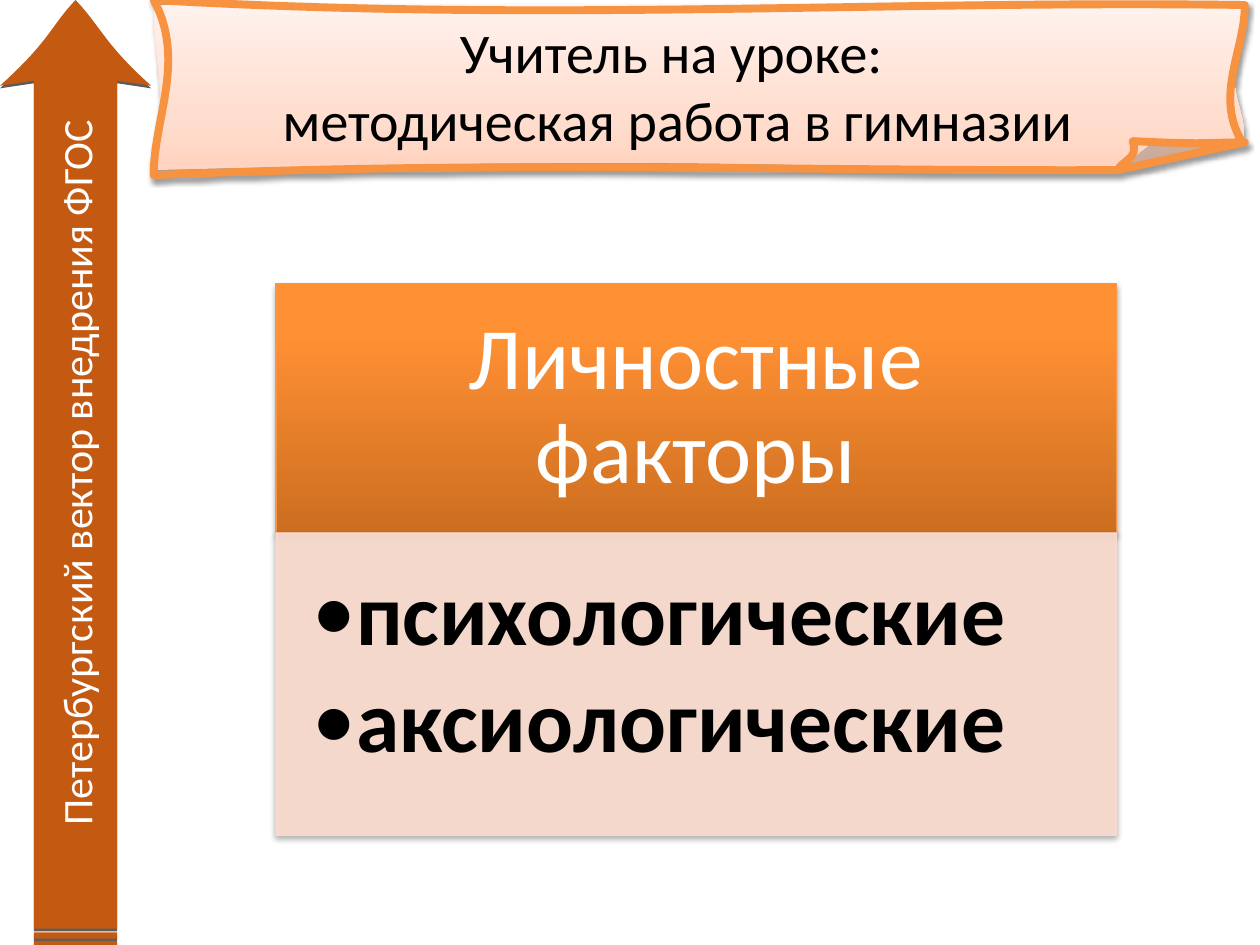
from lxml.etree import SubElement
from pptx import Presentation
from pptx.dml.color import RGBColor
from pptx.enum.shapes import MSO_SHAPE
from pptx.enum.text import MSO_ANCHOR, PP_ALIGN
from pptx.oxml.ns import qn
from pptx.util import Inches, Pt

COLORS = {
    "arrow": "C45911", "banner_line": "F69240", "header_line": "F79646",
    "panel": "FCDDCF", "black": "000000", "white": "FFFFFF",
}
BANNER_GRADIENT = [(0, "FFD2BD"), (35, "FFDED0"), (100, "FFF2ED")]
HEADER_GRADIENT = [(0, "CC6E20"), (80, "FF9034"), (100, "FF9136")]
FONT = "Calibri"


def rgb(name):
    return RGBColor.from_string(COLORS[name])


def set_alpha(paint, percent):
    for color in paint.iter(qn("a:srgbClr")):
        SubElement(color, qn("a:alpha"), val=str(percent * 1000))


def set_gradient(shape, stops):
    """Fill from the bottom up with any number of stops."""
    shape.fill.gradient()
    gradient = shape._element.spPr.find(qn("a:gradFill"))
    for child in list(gradient):
        gradient.remove(child)
    stop_list = SubElement(gradient, qn("a:gsLst"))
    for position, color in stops:
        stop = SubElement(stop_list, qn("a:gs"), pos=str(position * 1000))
        SubElement(stop, qn("a:srgbClr"), val=color)
    SubElement(gradient, qn("a:lin"), ang="16200000", scaled="0")


def style(shape, fill, shadow, line=None, width=0.75):
    """fill: colour name or gradient stops; shadow: (alpha, blur, distance)."""
    if isinstance(fill, str):
        shape.fill.solid()
        shape.fill.fore_color.rgb = rgb(fill)
    else:
        set_gradient(shape, fill)
    if line:
        shape.line.color.rgb = rgb(line)
        shape.line.width = Pt(width)
    else:
        shape.line.fill.background()
    shape.shadow.inherit = False
    alpha, blur, distance = shadow
    effects = shape._element.spPr.find(qn("a:effectLst"))
    outer = SubElement(effects, qn("a:outerShdw"), blurRad=str(Pt(blur)),
                       dist=str(Pt(distance)), dir="5400000", rotWithShape="0")
    SubElement(outer, qn("a:srgbClr"), val=COLORS["black"])
    set_alpha(outer, alpha)


def add_outline(slide, layers):
    """Layers are (attributes, closed, contours).

    A contour is a start point, then points (2 numbers) or Bézier curves (6).
    """
    builder = None
    for _, closed, contours in layers:
        for contour in contours:
            corners = [(Inches(part[i]), Inches(part[i + 1]))
                       for part in contour for i in range(0, len(part), 2)]
            if builder is None:
                builder = slide.shapes.build_freeform(*corners[0], scale=1.0)
            else:
                builder.move_to(*corners[0])
            builder.add_line_segments(corners[1:], close=closed)
    shape = builder.convert_to_shape()

    # Regroup the straight steps into layers with true curves
    layer_list = next(shape._element.spPr.iter(qn("a:pathLst")))
    straight = layer_list[0]
    steps = iter(list(straight))
    for attributes, closed, contours in layers:
        layer = SubElement(layer_list, qn("a:path"), w=straight.get("w"),
                           h=straight.get("h"), **attributes)
        for _, *segments in contours:
            layer.append(next(steps))
            for segment in segments:
                if len(segment) == 2:
                    layer.append(next(steps))
                else:
                    curve = SubElement(layer, qn("a:cubicBezTo"))
                    for _ in range(3):
                        curve.append(next(steps)[0])
            if closed:
                layer.append(next(steps))
    layer_list.remove(straight)
    return shape


def write(shape, paragraphs, size, color, bold=False, align=PP_ALIGN.CENTER,
          anchor=MSO_ANCHOR.MIDDLE, insets=(0.1, 0.05, 0.1, 0.05),
          spacing=None, after=None):
    """Each paragraph is a list of lines."""
    frame = shape.text_frame
    frame.word_wrap = True
    frame.vertical_anchor = anchor
    (frame.margin_left, frame.margin_top,
     frame.margin_right, frame.margin_bottom) = map(Inches, insets)
    for index, lines in enumerate(paragraphs):
        paragraph = frame.add_paragraph() if index else frame.paragraphs[0]
        paragraph.alignment = align
        if spacing:
            paragraph.line_spacing = spacing
        if after:
            paragraph.space_after = Pt(after)
        for number, line in enumerate(lines):
            if number:
                paragraph.add_line_break()
            run = paragraph.add_run()
            run.text = line
            run.font.name = FONT
            run.font.size = Pt(size)
            run.font.bold = bold
            run.font.color.rgb = rgb(color)


def add_bullets(text_box, indent):
    for paragraph in text_box.text_frame.paragraphs:
        paragraph.level = 1
        properties = paragraph._p.get_or_add_pPr()
        properties.set("marL", str(Inches(indent)))
        properties.set("indent", str(-Inches(indent)))
        SubElement(properties, qn("a:buFont"), typeface=FONT)
        SubElement(properties, qn("a:buChar"), char="•")


def add_vector_arrow(slide):
    """Drawn pointing right, then turned to point up."""
    length, top, bottom = 7.5, 0.27, 0.93
    stripes = [[(left, top), (right, top), (right, bottom), (left, bottom)]
               for left, right in ((0, 0.03), (0.05, 0.1))]
    body = [(0.13, top), (6.86, top), (6.82, 0),
            (7.18, 0.4, 7.29, 0.4, length, 0.6), (7.29, 0.8, 7.15, 0.83, 6.82, 1.2),
            (6.86, bottom), (0.13, bottom)]
    arrow = add_outline(slide, [({}, True, stripes + [body])])
    arrow.left, arrow.top = Inches(-3.15), Inches(3.15)
    arrow.rotation = 270
    style(arrow, "arrow", (63, 0, 1.5))
    write(arrow, [["Петербургский вектор внедрения ФГОС"]], 24, "white")


def add_banner(slide):
    sheet = [(1.22, 0.04), (9.88, 0.04), (9.68, 0.75, 9.88, 0.77, 9.88, 1.13),
             (9.26, 1.21, 9.47, 1.27, 8.87, 1.35),
             (6.32, 1.35, 6.22, 1.22, 1.22, 1.35),
             (1.35, 0.9, 1.22, 0.48, 1.22, 0.04)]
    fold = [(8.87, 1.35), (9.17, 1.12), (9.88, 1.13), (8.87, 1.35)]
    edge = [(8.87, 1.35), (8.91, 1.27, 9.04, 1.26, 8.99, 1.12),
            (9.59, 1.15, 9.58, 1.13, 9.88, 1.13), (8.87, 1.35),
            (6.32, 1.36, 3.99, 1.27, 1.22, 1.39), (1.22, 0.94, 1.48, 0.48, 1.22, 0),
            (4.31, 0.18, 6.99, 0, 9.88, 0.04), (9.88, 0.41, 9.62, 0.78, 9.88, 1.16)]
    banner = add_outline(slide, [
        ({"stroke": "0"}, True, [sheet]),
        ({"stroke": "0", "fill": "darkenLess"}, True, [fold]),
        ({"fill": "none"}, False, [edge])])
    style(banner, BANNER_GRADIENT, (38, 3.1, 1.6), "banner_line", 4.5)
    title = slide.shapes.add_textbox(Inches(0.88), Inches(0.05), Inches(9), Inches(1.25))
    write(title, [["Учитель на уроке: ", "методическая работа в гимназии"]], 32, "black")


def add_card_part(slide, top, height, fill, line):
    """A filled block and the text box that lies over it."""
    area = Inches(2.19), Inches(top), Inches(6.67), Inches(height)
    block = slide.shapes.add_shape(MSO_SHAPE.RECTANGLE, *area)
    style(block, fill, (35, 3.1, 1.8), line)
    return block, slide.shapes.add_textbox(*area)


def add_factor_card(slide):
    _, heading = add_card_part(slide, 2.25, 1.98, HEADER_GRADIENT, "header_line")
    write(heading, [["Личностные факторы"]], 50, "white",
          insets=(0.39, 0.22, 0.39, 0.22), spacing=0.9)
    panel, factors = add_card_part(slide, 4.23, 2.4, "panel", "panel")
    for paint in (qn("a:solidFill"), qn("a:ln")):
        set_alpha(panel._element.spPr.find(paint), 90)
    write(factors, [["психологические"], ["аксиологические"]], 50, "black", bold=True,
          align=PP_ALIGN.LEFT, anchor=MSO_ANCHOR.TOP,
          insets=(0.29, 0.29, 0.39, 0.44), spacing=0.9, after=7.5)
    add_bullets(factors, 0.31)


def main():
    deck = Presentation()
    deck.slide_width, deck.slide_height = Inches(10), Inches(7.5)
    slide = deck.slides.add_slide(deck.slide_layouts[6])
    add_vector_arrow(slide)
    add_banner(slide)
    add_factor_card(slide)
    deck.save("out.pptx")


if __name__ == "__main__":
    main()
